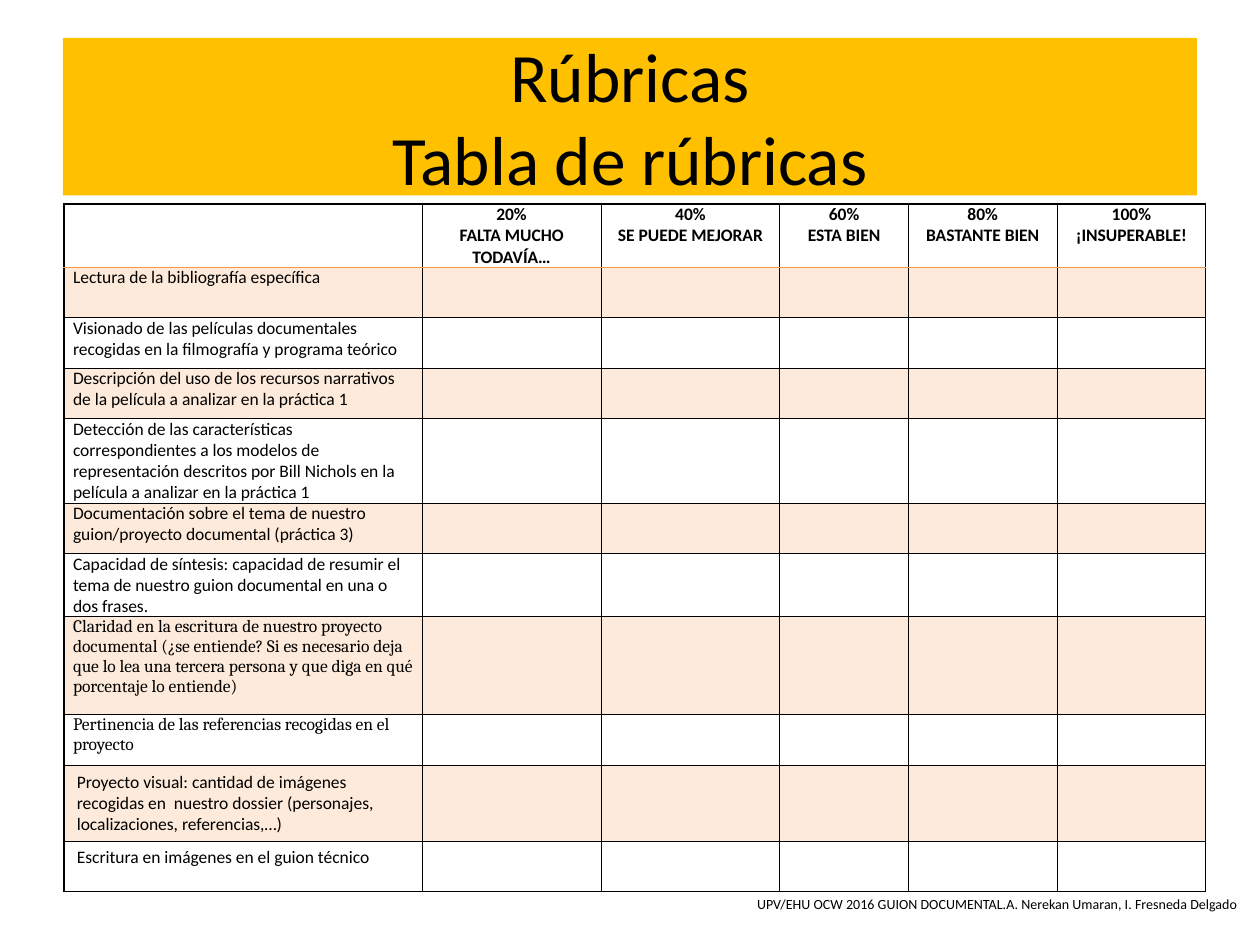
from lxml import etree
from pptx import Presentation
from pptx import util as u
from pptx.dml.color import RGBColor
from pptx.enum import shapes, text
from pptx.oxml import ns

GRID_COLUMNS, GRID_ROWS = 100, 75
LEVELS = [
    ("20%", "FALTA MUCHO TODAVÍA…"),
    ("40%", "SE PUEDE MEJORAR"),
    ("60%", "ESTA BIEN"),
    ("80%", "BASTANTE BIEN"),
    ("100%", "¡INSUPERABLE!"),
]
CRITERIA = [
    ("Lectura de la bibliografía específica", 4),
    ("Visionado de las películas documentales recogidas en la filmografía y programa teórico", 4),
    ("Descripción del uso de los recursos narrativos de la película a analizar en la práctica 1", 4),
    ("Detección de las características correspondientes a los modelos de representación "
     "descritos por Bill Nichols en la película a analizar en la práctica 1", 6.7),
    ("Documentación sobre el tema de nuestro guion/proyecto documental (práctica 3)", 4),
    ("Capacidad de síntesis: capacidad de resumir el tema de nuestro guion documental "
     "en una o dos frases.", 5),
    ("Claridad en la escritura de nuestro proyecto documental (¿se entiende? Si es necesario "
     "deja que lo lea una tercera persona y que diga en qué porcentaje lo entiende)", 7.8),
    ("Pertinencia de las referencias recogidas en el proyecto", 4),
    ("Proyecto visual: cantidad de imágenes recogidas en  nuestro dossier (personajes, "
     "localizaciones, referencias,…)", 6),
    ("Escritura en imágenes en el guion técnico", 4),
]
SHADED = {1, 3, 5, 7, 9}
SERIF = {7, 8}
ROOMY = {9, 10}
COLUMN_WIDTHS = [28.4, 14.2, 14.2, 10.2, 11.8, 11.8]
HEADER_HEIGHT = 5


def color(value):
    return RGBColor.from_string(value)


class RubricSlide:
    font, serif = "Calibri", "Cambria"
    ink, banner, accent = "000000", "FFC000", "F79646"

    def __init__(self, deck):
        self.deck = deck
        self.slide = deck.slides.add_slide(deck.slide_layouts[6])

    def across(self, columns):
        return round(self.deck.slide_width * columns / GRID_COLUMNS)

    def down(self, rows):
        return round(self.deck.slide_height * rows / GRID_ROWS)

    def box(self, left, top, width, height):
        return self.across(left), self.down(top), self.across(width), self.down(height)

    def add_words(self, paragraph, words, size, bold=False, font=None):
        run = paragraph.add_run()
        run.text = words
        run.font.size = u.Pt(size)
        run.font.bold = bold
        run.font.name = font or self.font
        run.font.color.rgb = color(self.ink)

    def title(self, lines, *place):
        banner = self.slide.shapes.add_shape(shapes.MSO_SHAPE.RECTANGLE, *self.box(*place))
        banner.shadow.inherit = False
        banner.fill.solid()
        banner.fill.fore_color.rgb = color(self.banner)
        banner.line.fill.background()
        frame = banner.text_frame
        frame.word_wrap = True
        frame.vertical_anchor = text.MSO_ANCHOR.MIDDLE
        heading = frame.paragraphs[0]
        heading.alignment = text.PP_ALIGN.CENTER
        for index, line in enumerate(lines):
            if index:
                heading.add_line_break()
            self.add_words(heading, line, 39.6)

    def credit(self, words, *place):
        frame = self.slide.shapes.add_textbox(*self.box(*place)).text_frame
        frame.word_wrap = True
        self.add_words(frame.paragraphs[0], words, 8)

    def border(self, cell, side, width, line_color):
        properties = cell._tc.get_or_add_tcPr()
        line = etree.SubElement(properties, ns.qn(f"a:ln{side}"), w=str(u.Pt(width)))
        fill = etree.SubElement(line, ns.qn("a:solidFill"))
        etree.SubElement(fill, ns.qn("a:srgbClr"), val=line_color)

    def dress(self, cell, row, column, last_row, last_column):
        self.border(cell, "L", 1 if column == 0 else 0.5, self.ink)
        self.border(cell, "R", 1 if column == last_column else 0.5, self.ink)
        self.border(cell, "T", 1 if row < 2 else 0.5, self.accent if row == 1 else self.ink)
        self.border(cell, "B", 1 if row in (0, last_row) else 0.5,
                    self.accent if row == 0 else self.ink)
        if row in SHADED:
            cell.fill.solid()
            cell.fill.fore_color.rgb = color(self.accent)
            tint = cell._tc.tcPr.find(f"{ns.qn('a:solidFill')}/{ns.qn('a:srgbClr')}")
            etree.SubElement(tint, ns.qn("a:alpha"), val="20000")
        else:
            cell.fill.background()

    def tighten(self, cell):
        cell.margin_left = cell.margin_right = u.Inches(0.07)
        cell.margin_top = cell.margin_bottom = 0

    def rubric(self, left, top):
        heights = [HEADER_HEIGHT] + [height for _, height in CRITERIA]
        place = self.box(left, top, sum(COLUMN_WIDTHS), sum(heights))
        table = self.slide.shapes.add_table(len(heights), len(COLUMN_WIDTHS), *place).table
        table.first_row = table.horz_banding = False
        for column, width in zip(table.columns, COLUMN_WIDTHS):
            column.width = self.across(width)
        for row, height in zip(table.rows, heights):
            row.height = self.down(height)
        for r in range(len(heights)):
            for c in range(len(COLUMN_WIDTHS)):
                self.dress(table.cell(r, c), r, c, len(heights) - 1, len(COLUMN_WIDTHS) - 1)
        for c, level in enumerate(LEVELS, 1):
            cell = table.cell(0, c)
            self.tighten(cell)
            frame = cell.text_frame
            for paragraph, words in zip((frame.paragraphs[0], frame.add_paragraph()), level):
                paragraph.alignment = text.PP_ALIGN.CENTER
                self.add_words(paragraph, words, 10, bold=True)
        for r, (criterion, _) in enumerate(CRITERIA, 1):
            cell = table.cell(r, 0)
            if r not in ROOMY:
                self.tighten(cell)
            self.add_words(cell.text_frame.paragraphs[0], criterion, 10,
                           font=self.serif if r in SERIF else self.font)


def main():
    deck = Presentation()
    deck.slide_width, deck.slide_height = u.Inches(10), u.Inches(7.5)
    page = RubricSlide(deck)
    page.credit("UPV/EHU OCW 2016 GUION DOCUMENTAL.A. Nerekan Umaran, I. Fresneda Delgado",
                59.1, 70.6, 40.9, 5.4)
    page.rubric(5.1, 16.2)
    page.title(["Rúbricas", "Tabla de rúbricas"], 5, 3, 90, 12.5)
    deck.save("out.pptx")


if __name__ == "__main__":
    main()
